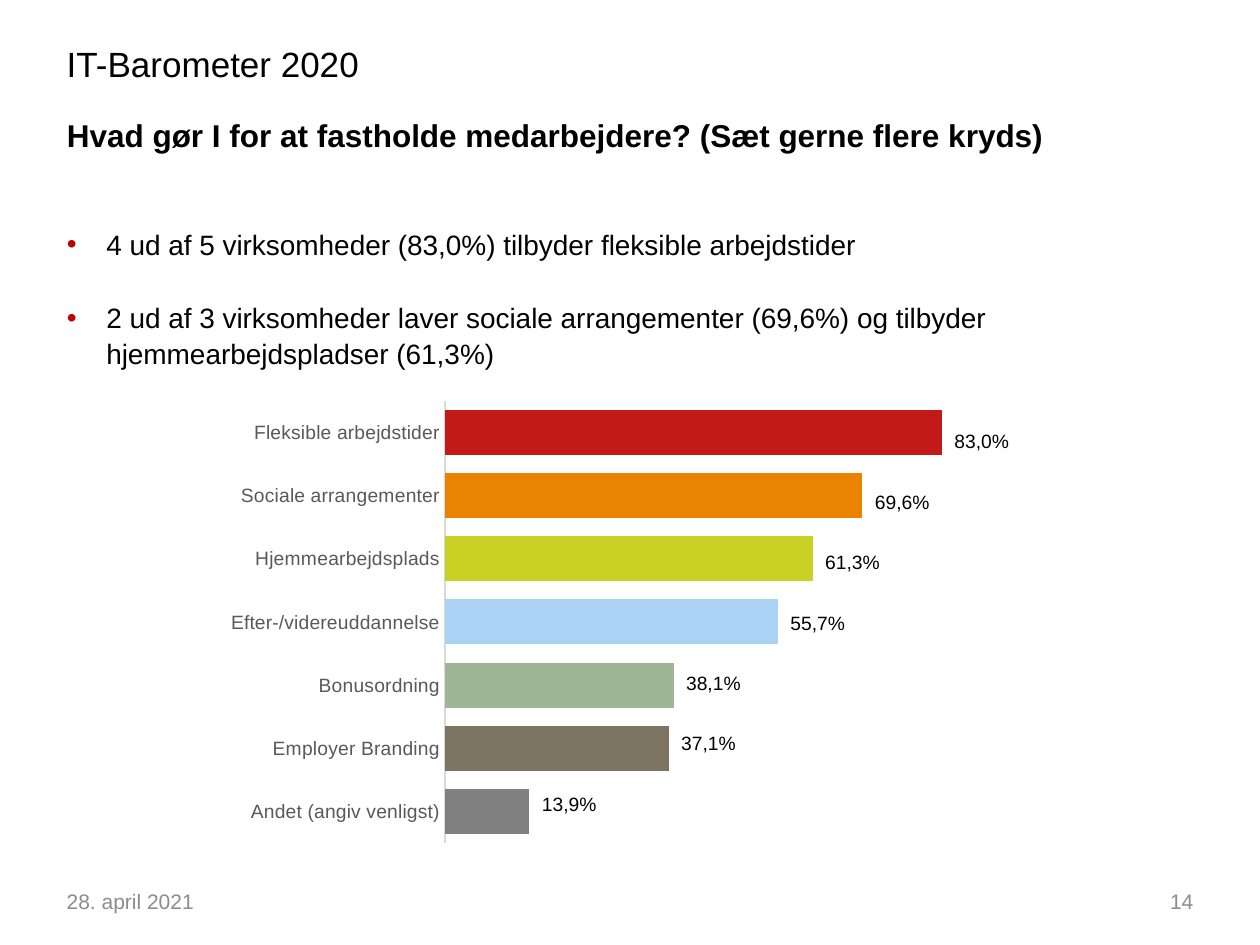
from pptx import Presentation
from pptx.chart.data import CategoryChartData
from pptx.dml.color import RGBColor
from pptx.enum.chart import XL_CHART_TYPE, XL_TICK_MARK
from pptx.enum.text import MSO_ANCHOR, MSO_AUTO_SIZE, PP_ALIGN
from pptx.oxml import parse_xml
from pptx.oxml.ns import nsdecls
from pptx.util import Pt

# Content
REPORT = "IT-Barometer 2020"
QUESTION = "Hvad gør I for at fastholde medarbejdere? (Sæt gerne flere kryds)"
FINDINGS = [
    "4 ud af 5 virksomheder (83,0%) tilbyder fleksible arbejdstider",
    "2 ud af 3 virksomheder laver sociale arrangementer (69,6%) og tilbyder "
    "hjemmearbejdspladser (61,3%)",
]
DATE, PAGE = "28. april 2021", "14"
# Measure, bar value, share shown, bar colour; from top to bottom
MEASURES = [
    ("Fleksible arbejdstider", 100, "83,0%", "C21919"),
    ("Sociale arrangementer", 84, "69,6%", "E98300"),
    ("Hjemmearbejdsplads", 74, "61,3%", "C8D124"),
    ("Efter-/videreuddannelse", 67, "55,7%", "AAD2F5"),
    ("Bonusordning", 46, "38,1%", "9EB696"),
    ("Employer Branding", 45, "37,1%", "7C7461"),
    ("Andet (angiv venligst)", 17, "13,9%", "808080"),
]

THEME = {
    "font": "Arial",
    "text": "000000", "muted": "8C8C8C", "axis_text": "595959",
    "axis_line": "D9D9D9", "bullet": "C00000",
    "report": 20, "title": 18, "body": 16, "footer": 12, "label": 11,
}

# Layout in points
SLIDE_W, SLIDE_H, MARGIN = 720, 540, 31
CHART = (123, 224, 448.5, 263)
PLOT = (254.3, 229, 284, 253)
FOOTER_TOP, FOOTER_W, FOOTER_H = 500.4, 168, 28.8
LABEL_TOP, LABEL_STEP, LABEL_W, LABEL_H = 242, 34.5, 46, 21


def style(font, size, color, bold=False):
    font.name, font.size, font.bold = THEME["font"], Pt(THEME[size]), bold
    font.color.rgb = RGBColor.from_string(THEME[color])


def place(shape, left, top, width, height):
    shape.left, shape.top = Pt(left), Pt(top)
    shape.width, shape.height = Pt(width), Pt(height)


def add_text(slide, text, box, size, color="text", align=PP_ALIGN.LEFT,
             anchor=MSO_ANCHOR.TOP, wrap=True):
    frame = slide.shapes.add_textbox(*map(Pt, box)).text_frame
    frame.text = text
    frame.word_wrap, frame.vertical_anchor = wrap, anchor
    frame.paragraphs[0].alignment = align
    style(frame.paragraphs[0].runs[0].font, size, color)


def add_bullet(paragraph):
    props = paragraph._p.get_or_add_pPr()
    props.set("marL", str(Pt(22.5)))
    props.set("indent", str(-Pt(22.5)))
    for xml in (
        f'<a:buClr {nsdecls("a")}><a:srgbClr val="{THEME["bullet"]}"/></a:buClr>',
        f'<a:buFont {nsdecls("a")} typeface="{THEME["font"]}"/>',
        f'<a:buChar {nsdecls("a")} char="•"/>',
    ):
        props.append(parse_xml(xml))


def fix_plot_area(chart):
    left, top, width, height = CHART
    x, y, w, h = PLOT
    shares = {"x": (x - left) / width, "y": (y - top) / height,
              "w": w / width, "h": h / height}
    parts = "".join(f'<c:{key}Mode val="edge"/>' for key in "xy")
    parts += "".join(f'<c:{key} val="{share:.4f}"/>' for key, share in shares.items())
    area = chart.element.chart.plotArea
    for old in area.findall("{*}layout"):
        area.remove(old)
    area.insert(0, parse_xml(
        f'<c:layout {nsdecls("c")}><c:manualLayout>'
        f'<c:layoutTarget val="inner"/>{parts}</c:manualLayout></c:layout>'))


def add_measures_chart(slide):
    bars = MEASURES[::-1]
    data = CategoryChartData()
    data.categories = [name for name, *_ in bars]
    data.add_series("Series 1", [value for _, value, *_ in bars])
    chart = slide.shapes.add_chart(
        XL_CHART_TYPE.BAR_CLUSTERED, *map(Pt, CHART), data).chart
    chart.has_legend = chart.has_title = False
    style(chart.font, "label", "text")
    fix_plot_area(chart)

    # Axes
    categories, values = chart.category_axis, chart.value_axis
    categories.major_tick_mark = categories.minor_tick_mark = XL_TICK_MARK.NONE
    style(categories.tick_labels.font, "label", "axis_text")
    categories.format.line.color.rgb = RGBColor.from_string(THEME["axis_line"])
    categories.format.line.width = Pt(0.75)
    values.minimum_scale, values.maximum_scale = 0, 100
    values.has_major_gridlines = values.visible = False

    # Bars
    plot = chart.plots[0]
    plot.gap_width, plot.overlap, plot.vary_by_categories = 40, -25, False
    for index, (*_, color) in enumerate(bars):
        fill = plot.series[0].points[index].format.fill
        fill.solid()
        fill.fore_color.rgb = RGBColor.from_string(color)


def main():
    prs = Presentation()
    prs.slide_width, prs.slide_height = Pt(SLIDE_W), Pt(SLIDE_H)
    slide = prs.slides.add_slide(prs.slide_layouts[1])
    title, body = slide.placeholders

    add_measures_chart(slide)

    # Heading
    add_text(slide, REPORT, (MARGIN, 20.9, 228, 28.8), "report")
    place(title, MARGIN, 62.6, 648, 39.6)
    title.text_frame.text = QUESTION
    title.text_frame.vertical_anchor = MSO_ANCHOR.TOP
    title.text_frame.auto_size = MSO_AUTO_SIZE.NONE
    title.text_frame.paragraphs[0].alignment = PP_ALIGN.LEFT
    style(title.text_frame.paragraphs[0].runs[0].font, "title", "text", bold=True)

    # Findings
    place(body, MARGIN, 125.3, 592.6, 110.9)
    body.text_frame.text = "\n".join(FINDINGS)
    body.text_frame.auto_size = MSO_AUTO_SIZE.NONE
    for index, paragraph in enumerate(body.text_frame.paragraphs):
        add_bullet(paragraph)
        paragraph.space_before = Pt(22 if index else 0)
        paragraph.line_spacing = 1.05
        style(paragraph.runs[0].font, "body", "text")

    # Shares, each starting where its bar ends
    for row, (_, value, share, _) in enumerate(MEASURES):
        bar_end = PLOT[0] + PLOT[2] * value / 100
        add_text(slide, share,
                 (bar_end, LABEL_TOP + row * LABEL_STEP, LABEL_W, LABEL_H),
                 "label", wrap=False)

    # Footer
    for text, left, align in (
        (DATE, MARGIN, PP_ALIGN.LEFT),
        (PAGE, SLIDE_W - MARGIN - FOOTER_W, PP_ALIGN.RIGHT),
    ):
        add_text(slide, text, (left, FOOTER_TOP, FOOTER_W, FOOTER_H),
                 "footer", "muted", align, MSO_ANCHOR.MIDDLE)

    prs.save("out.pptx")


if __name__ == "__main__":
    main()
